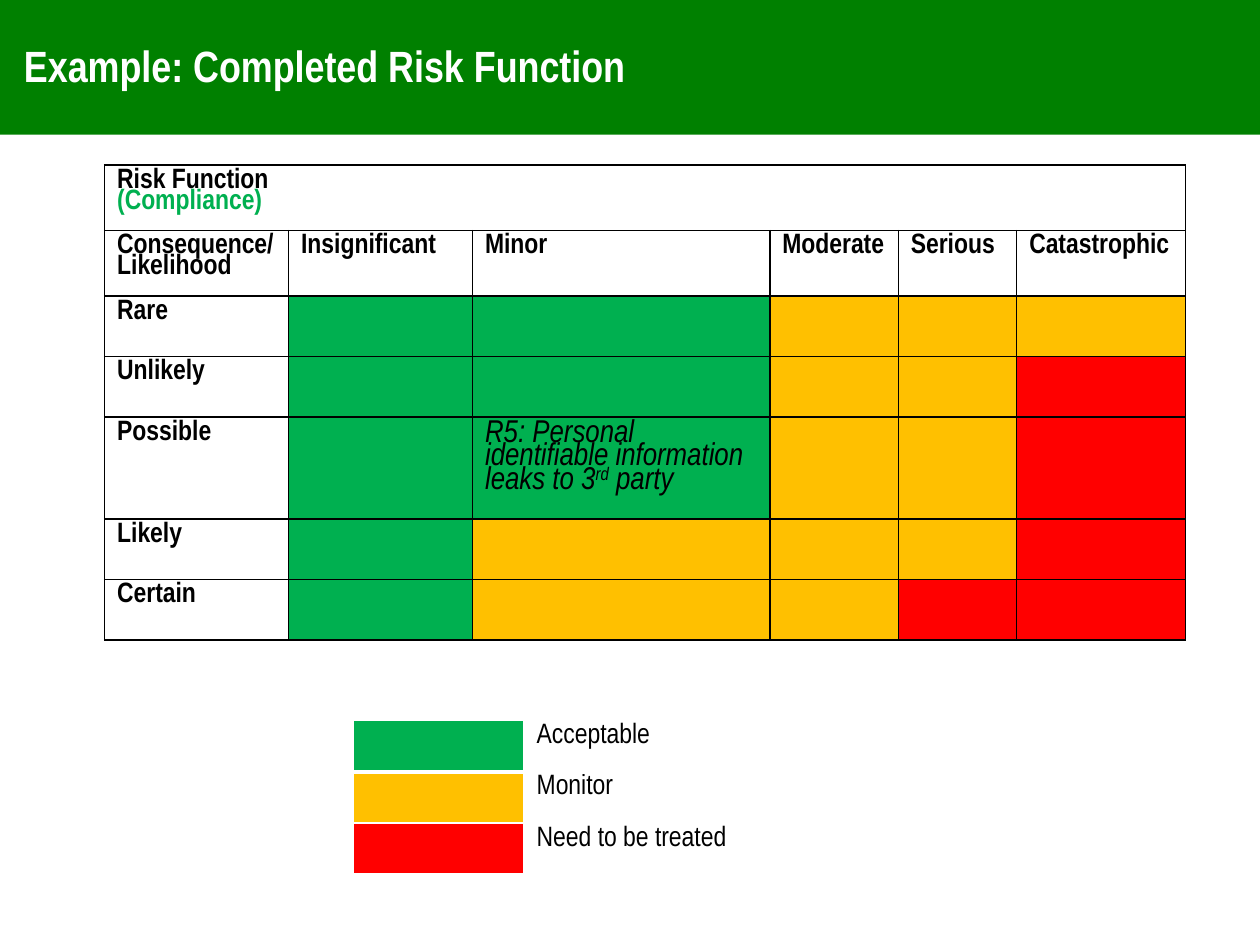
from lxml import etree
from pptx import Presentation
from pptx.dml.color import RGBColor
from pptx.enum import shapes, text
from pptx.oxml import ns
from pptx.util import Inches, Pt

THEME = {
    "font": "Arial Narrow",
    "band": "008000", "white": "FFFFFF", "black": "000000",
    "accept": "00B050", "monitor": "FFC000", "treat": "FF0000",
    "title": 25, "body": 16, "risk": 18, "spacing": 0.8,
}
TITLE = "Example: Completed Risk Function"
CORNER = [[("Risk Function", {})], [("(Compliance)", {"color": "accept"})]]
HEADINGS = ["Consequence/\nLikelihood", "Insignificant", "Minor",
            "Moderate", "Serious", "Catastrophic"]
LEVELS = {"A": "accept", "M": "monitor", "T": "treat"}
LIKELIHOODS = [("Rare", "AAMMM"), ("Unlikely", "AAMMT"), ("Possible", "AAMMT"),
               ("Likely", "AMMMT"), ("Certain", "AMMTT")]
RISK = [[("R5: Personal identifiable information leaks to 3", {}),
         ("rd", {"raised": True}), (" party", {})]]
RISK_CELL = (4, 2)
LEGEND = [("accept", "Acceptable"), ("monitor", "Monitor"),
          ("treat", "Need to be treated")]

MATRIX_COLUMNS = [1.46, 1.46, 2.36, 1.02, 0.94, 1.34]
MATRIX_ROWS = [0.52, 0.52, 0.48, 0.48, 0.81, 0.48, 0.48]
LEGEND_COLUMNS = [1.36, 3.83]
LEGEND_ROWS = [0.33] * len(LEGEND)


def rgb(name):
    return RGBColor.from_string(THEME[name])


def write(frame, content, size="body", color="black", bold=False, italic=False):
    if isinstance(content, str):
        content = [[(line, {})] for line in content.split("\n")]
    frame.word_wrap = True
    for index, pieces in enumerate(content):
        paragraph = frame.paragraphs[0] if index == 0 else frame.add_paragraph()
        paragraph.alignment = text.PP_ALIGN.LEFT
        paragraph.line_spacing = THEME["spacing"]
        for words, changes in pieces:
            run = paragraph.add_run()
            run.text = words
            run.font.name = THEME["font"]
            run.font.size = Pt(THEME[size])
            run.font.bold, run.font.italic = bold, italic
            run.font.color.rgb = rgb(changes.get("color", color))
            if changes.get("raised"):
                run._r.get_or_add_rPr().set("baseline", "30000")


def set_borders(cell, color, **widths):
    properties = cell._tc.get_or_add_tcPr()
    for side in "LRTB":
        line = etree.SubElement(properties, ns.qn(f"a:ln{side}"),
                                w=str(Pt(widths.get(side, 1))))
        fill = etree.SubElement(line, ns.qn("a:solidFill"))
        etree.SubElement(fill, ns.qn("a:srgbClr"), val=THEME[color])


def add_table(slide, left, top, columns, rows):
    table = slide.shapes.add_table(
        len(rows), len(columns), Inches(left), Inches(top),
        Inches(sum(columns)), Inches(sum(rows))).table
    table.first_row = table.horz_banding = False
    for column, width in zip(table.columns, columns):
        column.width = Inches(width)
    for row, height in zip(table.rows, rows):
        row.height = Inches(height)
    for cell in table.iter_cells():
        cell.text_frame.paragraphs[0].line_spacing = THEME["spacing"]
    return table


def paint(cell, color):
    cell.fill.solid()
    cell.fill.fore_color.rgb = rgb(color)


def add_header(slide):
    band = slide.shapes.add_shape(shapes.MSO_SHAPE.RECTANGLE, 0, Inches(-0.03),
                                  Inches(10), Inches(1.1))
    band.shadow.inherit = False
    paint(band, "band")
    band.line.fill.background()
    title = slide.shapes.title
    title.left, title.top, title.width, title.height = map(
        Inches, (0.09, 0.21, 9, 0.69))
    title.text_frame.vertical_anchor = text.MSO_ANCHOR.MIDDLE
    title.text_frame.auto_size = text.MSO_AUTO_SIZE.NONE
    write(title.text_frame, TITLE, size="title", color="white", bold=True)
    title._element.addprevious(band._element)


def add_matrix(slide):
    table = add_table(slide, 0.83, 1.31, MATRIX_COLUMNS, MATRIX_ROWS)
    for cell in table.iter_cells():
        set_borders(cell, "black")
        cell.fill.background()
    table.cell(0, 0).merge(table.cell(0, len(HEADINGS) - 1))
    write(table.cell(0, 0).text_frame, CORNER, bold=True)
    for column, heading in enumerate(HEADINGS):
        write(table.cell(1, column).text_frame, heading, bold=True)
    for row, (likelihood, levels) in enumerate(LIKELIHOODS, start=2):
        write(table.cell(row, 0).text_frame, likelihood, bold=True)
        for column, level in enumerate(levels, start=1):
            paint(table.cell(row, column), LEVELS[level])
    write(table.cell(*RISK_CELL).text_frame, RISK, size="risk", italic=True)


def add_legend(slide):
    table = add_table(slide, 2.8, 5.72, LEGEND_COLUMNS, LEGEND_ROWS)
    heavy_sides = [{"B": 3}, {"T": 3}, {}]
    for row, (level, label) in enumerate(LEGEND):
        swatch, caption = table.cell(row, 0), table.cell(row, 1)
        for cell in (swatch, caption):
            set_borders(cell, "white", **heavy_sides[row])
        paint(swatch, level)
        caption.fill.background()
        write(caption.text_frame, label)


def main():
    presentation = Presentation()
    presentation.slide_width, presentation.slide_height = Inches(10), Inches(7.5)
    slide = presentation.slides.add_slide(presentation.slide_layouts[5])
    add_header(slide)
    add_matrix(slide)
    add_legend(slide)
    presentation.save("out.pptx")


if __name__ == "__main__":
    main()
